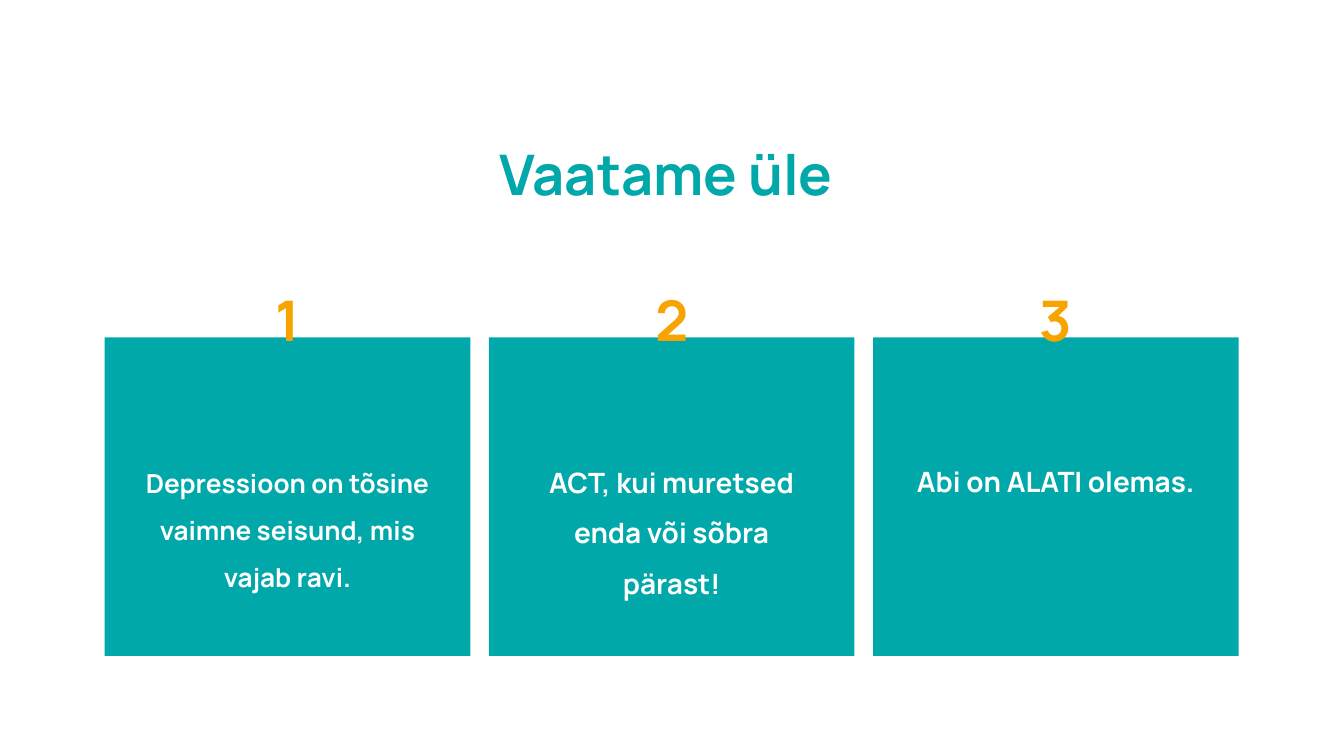
import pptx
import pptx.util
import pptx.dml.color
import pptx.enum.shapes
import pptx.enum.text

Cm = pptx.util.Cm

COLORS = {"teal": "00A8AA", "orange": "F7A400", "white": "FFFFFF"}
FONT = "Manrope"

HEADING = "Vaatame üle"
# message, size in points, then top, width and height of its text in cm
TAKEAWAYS = [
    ("Depressioon on tõsine vaimne seisund, mis vajab ravi.", 14, 8.43, 5.94, 3.76),
    ("ACT, kui muretsed enda või sõbra pärast!", 15, 8.38, 5.46, 3.4),
    ("Abi on ALATI olemas.", 15, 8.36, 5.77, 3.15),
]

CARD_LEFT, CARD_TOP, CARD_WIDTH, CARD_HEIGHT = 1.98, 6.38, 6.91, 6.02
CARD_PITCH = 7.26
NUMBER_TOP, NUMBER_WIDTH, NUMBER_HEIGHT = 4.72, 1.6, 1.65
HEADING_CENTER, HEADING_TOP, HEADING_WIDTH, HEADING_HEIGHT = 12.59, 1.96, 20.9, 1.98
HEADING_INSETS = (0.05, 0.05)
MESSAGE_INSETS = (0.18, 0.1)


def rgb(color):
    return pptx.dml.color.RGBColor.from_string(COLORS[color])


def add_card(slide, left):
    card = slide.shapes.add_shape(
        pptx.enum.shapes.MSO_SHAPE.RECTANGLE,
        Cm(left), Cm(CARD_TOP), Cm(CARD_WIDTH), Cm(CARD_HEIGHT))
    card.shadow.inherit = False
    card.fill.solid()
    card.fill.fore_color.rgb = rgb("teal")
    card.line.fill.background()


def add_centered_text(slide, text, center, top, width, height, size, color, insets):
    """Add a text box centred on the given x position, all in cm."""
    box = slide.shapes.add_textbox(Cm(center - width / 2), Cm(top), Cm(width), Cm(height))
    frame = box.text_frame
    frame.word_wrap = True
    frame.vertical_anchor = pptx.enum.text.MSO_ANCHOR.TOP
    frame.margin_left = frame.margin_right = Cm(insets[0])
    frame.margin_top = frame.margin_bottom = Cm(insets[1])
    paragraph = frame.paragraphs[0]
    paragraph.alignment = pptx.enum.text.PP_ALIGN.CENTER
    paragraph.line_spacing = 1.5
    run = paragraph.add_run()
    run.text = text
    run.font.name = FONT
    run.font.size = pptx.util.Pt(size)
    run.font.bold = True
    run.font.color.rgb = rgb(color)


def main():
    deck = pptx.Presentation()
    deck.slide_width, deck.slide_height = Cm(25.4), Cm(14.29)
    slide = deck.slides.add_slide(deck.slide_layouts[6])

    add_centered_text(slide, HEADING, HEADING_CENTER, HEADING_TOP, HEADING_WIDTH,
                      HEADING_HEIGHT, 30, "teal", HEADING_INSETS)
    for index, (message, size, top, width, height) in enumerate(TAKEAWAYS):
        left = CARD_LEFT + index * CARD_PITCH
        center = left + CARD_WIDTH / 2
        add_card(slide, left)
        add_centered_text(slide, message, center, top, width, height,
                          size, "white", MESSAGE_INSETS)
        add_centered_text(slide, str(index + 1), center, NUMBER_TOP, NUMBER_WIDTH,
                          NUMBER_HEIGHT, 30, "orange", HEADING_INSETS)

    deck.save("out.pptx")


if __name__ == "__main__":
    main()
